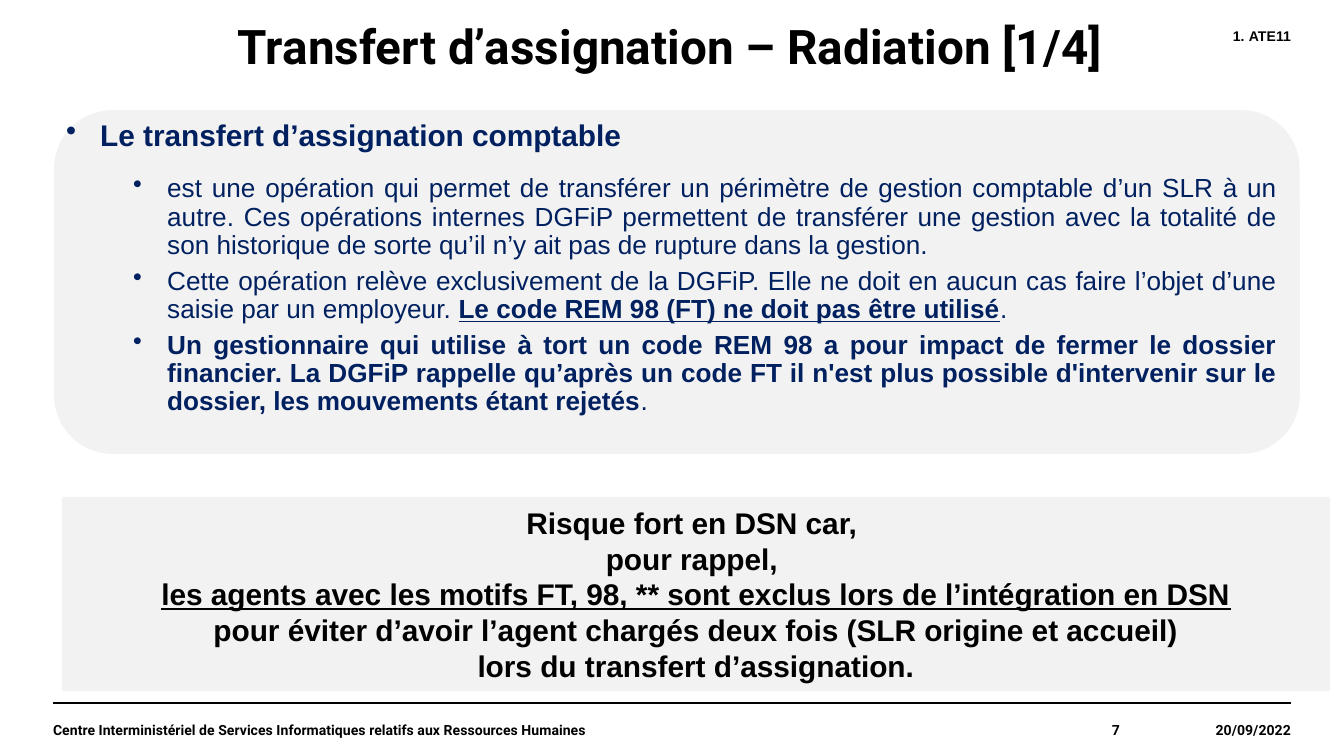
from lxml.etree import SubElement
from pptx import Presentation
from pptx.dml.color import RGBColor
from pptx.enum.shapes import MSO_CONNECTOR as Link, MSO_SHAPE as Kind
from pptx.enum.text import MSO_ANCHOR as Anchor, PP_ALIGN as Align
from pptx.oxml.ns import qn
from pptx.util import Pt

PX = 6804  # EMU per px
BLACK = RGBColor(0, 0, 0)
NAVY = RGBColor(0x00, 0x20, 0x60)
GREY = RGBColor(0xF2, 0xF2, 0xF2)

LEFT, RIGHT = 53, 1291
FOOT_Y, FOOT_H = 703, 53

HEAD = "Le transfert d’assignation comptable "
# Each point is a list of (text, bold, underlined)
POINTS = [
    [("est une opération qui permet de transférer un périmètre de gestion "
      "comptable d’un SLR à un autre. Ces opérations internes DGFiP permettent "
      "de transférer une gestion avec la totalité de son historique de sorte "
      "qu’il n’y ait pas de rupture dans la gestion.", False, False)],
    [("Cette opération relève exclusivement de la DGFiP. Elle ne doit en aucun "
      "cas faire l’objet d’une saisie par un employeur. ", False, False),
     ("Le code REM 98 (FT) ne doit pas être utilisé", True, True),
     (". ", False, False)],
    [("Un gestionnaire qui utilise à tort un code REM 98 a pour impact de "
      "fermer le dossier financier. La DGFiP rappelle qu’après un code FT il "
      "n'est plus possible d'intervenir sur le dossier, les mouvements étant "
      "rejetés", True, False),
     (".", False, False)],
]
# (text, underlined)
RISK = [
    ("Risque fort en DSN car, ", False),
    ("pour rappel, ", False),
    ("les agents avec les motifs FT, 98, ** sont exclus lors de l’intégration "
     "en DSN", True),
    (" pour éviter d’avoir l’agent chargés deux fois (SLR origine et accueil) ",
     False),
    ("lors du transfert d’assignation.", False),
]
FOOT = [
    (LEFT, 868, "Centre Interministériel de Services Informatiques relatifs aux "
     "Ressources Humaines", Align.LEFT),
    (921, 199, "7", Align.RIGHT),
    (1120, 171, "20/09/2022", Align.RIGHT),
]


def emu(*sizes):
    return [size * PX for size in sizes]


def add_run(para, text, size, face="Arial", color=BLACK, bold=True, under=False):
    run = para.add_run()
    run.text = text
    font = run.font
    font.size, font.name, font.bold = Pt(size), face, bold
    font.color.rgb = color
    if under:
        font.underline = True


def mark(para, left, hang, tag, **attrs):
    """Give a paragraph a hanging indent and a bullet or a number."""
    props = para._p.get_or_add_pPr()
    props.set("marL", str(left * PX))
    props.set("indent", str(-hang * PX))
    SubElement(props, qn(tag), **attrs)


def add_text(slide, x, y, w, h, inset=True, anchor=Anchor.TOP):
    frame = slide.shapes.add_textbox(*emu(x, y, w, h)).text_frame
    frame.word_wrap = True
    frame.vertical_anchor = anchor
    if not inset:
        frame.margin_left = frame.margin_right = 0
        frame.margin_top = frame.margin_bottom = 0
    return frame


def add_label(slide, x, y, w, h, text, size, align, anchor=Anchor.TOP):
    para = add_text(slide, x, y, w, h, False, anchor).paragraphs[0]
    para.alignment = align
    add_run(para, text, size, "Roboto")


def add_panel(slide, kind, x, y, w, h):
    panel = slide.shapes.add_shape(kind, *emu(x, y, w, h))
    panel.shadow.inherit = False
    panel.fill.solid()
    panel.fill.fore_color.rgb = GREY
    panel.line.fill.background()
    return panel


def add_rule(slide, y):
    rule = slide.shapes.add_connector(Link.STRAIGHT, *emu(LEFT, y, RIGHT, y))
    rule.line.color.rgb = BLACK
    rule.line.width = Pt(0.8)
    SubElement(rule._element.spPr, qn("a:effectLst"))


def add_points(slide):
    frame = add_text(slide, LEFT, 114, RIGHT - LEFT, 340)
    head = frame.paragraphs[0]
    mark(head, 34, 34, "a:buChar", char="•")
    head.space_after = Pt(10)
    add_run(head, HEAD, 16, color=NAVY)
    for point in POINTS:
        para = frame.add_paragraph()
        para.level = 1
        mark(para, 101, 34, "a:buChar", char="•")
        para.space_before = para.space_after = Pt(2)
        for text, bold, under in point:
            add_run(para, text, 14, color=NAVY, bold=bold, under=under)
    for para in frame.paragraphs:
        para.alignment = Align.JUSTIFY
        para.line_spacing = 0.9


def add_tag(slide):
    para = add_text(slide, 487, 27, RIGHT - 487, 52, False).paragraphs[0]
    para.alignment = Align.RIGHT
    mark(para, 16, 16, "a:buAutoNum", type="arabicPeriod")
    add_run(para, "ATE11", 7.5)


def add_risk(slide):
    frame = add_panel(slide, Kind.RECTANGLE, 62, 497, 1268, 194).text_frame
    frame.word_wrap = True
    frame.vertical_anchor = Anchor.MIDDLE
    for i, (text, under) in enumerate(RISK):
        para = frame.add_paragraph() if i else frame.paragraphs[0]
        para.alignment = Align.CENTER
        add_run(para, text, 16, under=under)


def main():
    deck = Presentation()
    deck.slide_width, deck.slide_height = emu(1344, 756)
    slide = deck.slides.add_slide(deck.slide_layouts[6])

    add_rule(slide, FOOT_Y)
    panel = add_panel(slide, Kind.ROUNDED_RECTANGLE, 56, 112, 1242, 340)
    panel.line.color.rgb = GREY
    panel.line.width = Pt(2)
    add_label(slide, 238, 17, 1238 - 238, 106,
              "Transfert d’assignation – Radiation [1/4]", 25.5, Align.LEFT)
    for x, w, text, align in FOOT:
        add_label(slide, x, FOOT_Y, w, FOOT_H, text, 7.5, align, Anchor.MIDDLE)
    add_points(slide)
    add_tag(slide)
    add_risk(slide)

    deck.save("out.pptx")


if __name__ == "__main__":
    main()
